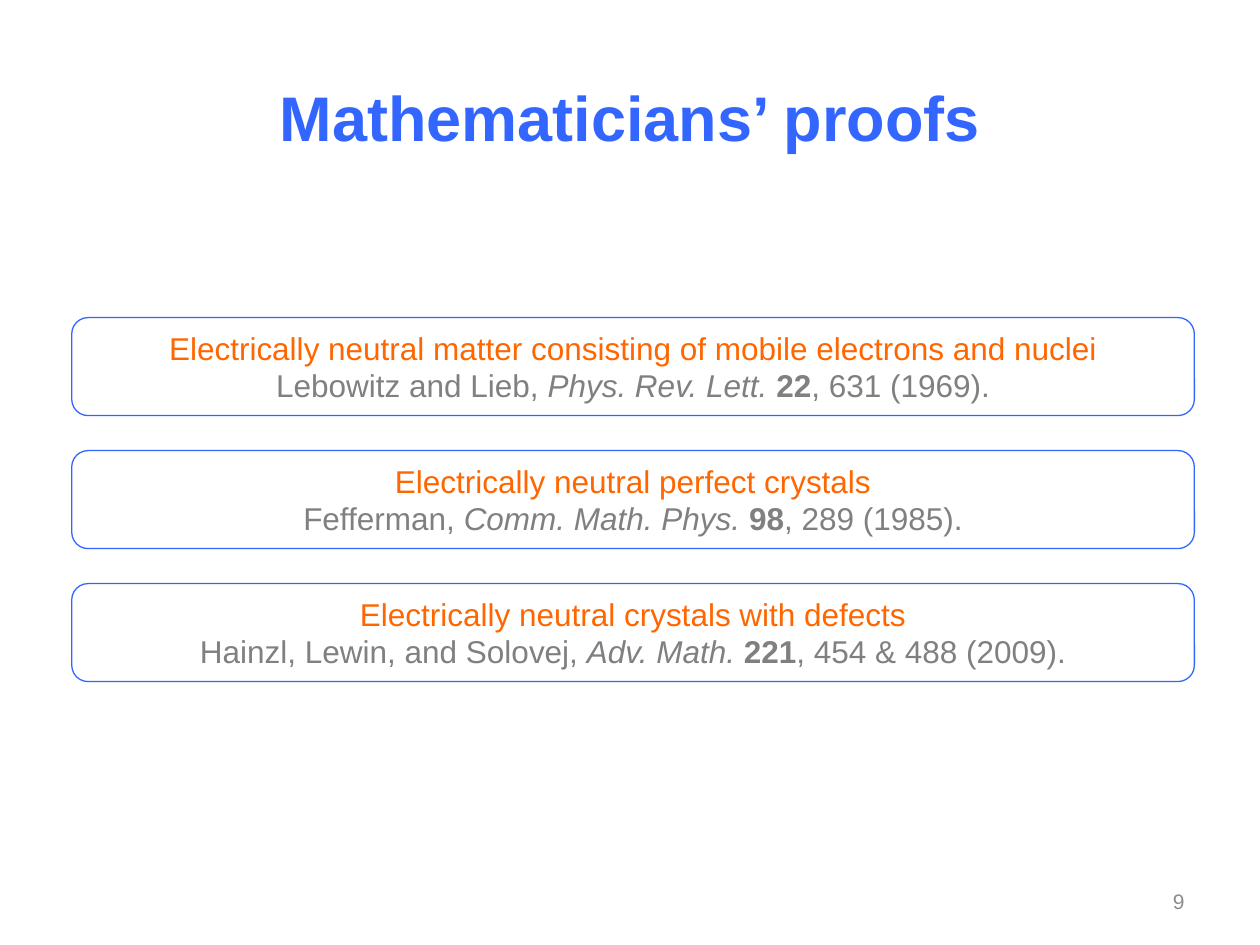
from pptx import Presentation
from pptx.dml.color import RGBColor as RGB
from pptx.enum.shapes import MSO_SHAPE as Shape
from pptx.enum.text import MSO_ANCHOR as Anchor, MSO_AUTO_SIZE as Fit, PP_ALIGN as Align
from pptx.util import Pt

COLORS = {"blue": "3366FF", "orange": "FF6600", "gray": "808080", "page": "8C8C8C"}
FONT = "Arial"

# Claim, authors, journal, volume, pages and year
PROOFS = [
    ("Electrically neutral matter consisting of mobile electrons and nuclei",
     "Lebowitz and Lieb, ", "Phys. Rev. Lett. ", "22", ", 631 (1969)."),
    ("Electrically neutral perfect crystals",
     "Fefferman, ", "Comm. Math. Phys. ", "98", ", 289 (1985)."),
    ("Electrically neutral crystals with defects",
     "Hainzl, Lewin, and Solovej, ", "Adv. Math. ", "221", ", 454 & 488 (2009)."),
]


def color(name):
    return RGB.from_string(COLORS[name])


def add_run(para, text, size, tint, bold=False, italic=False):
    run = para.add_run()
    run.text = text
    font = run.font
    font.name, font.size = FONT, Pt(size)
    font.bold, font.italic = bold, italic
    font.color.rgb = color(tint)


def add_title(slide, left, top, width, height):
    title = slide.shapes.title
    title.left, title.top = Pt(left), Pt(top)
    title.width, title.height = Pt(width), Pt(height)
    frame = title.text_frame
    frame.vertical_anchor = Anchor.MIDDLE
    para = frame.paragraphs[0]
    para.alignment = Align.CENTER
    add_run(para, "Mathematicians’ proofs", 36, "blue", bold=True)


def add_proof(slide, proof, left, top, width, height):
    claim, names, journal, volume, pages = proof
    card = slide.shapes.add_shape(
        Shape.ROUNDED_RECTANGLE, Pt(left), Pt(top), Pt(width), Pt(height))
    card.shadow.inherit = False
    card.fill.background()
    card.line.color.rgb = color("blue")
    card.line.width = Pt(0.75)
    frame = card.text_frame
    frame.word_wrap = True
    frame.auto_size = Fit.SHAPE_TO_FIT_TEXT
    frame.vertical_anchor = Anchor.TOP
    head, cite = frame.paragraphs[0], frame.add_paragraph()
    head.alignment = cite.alignment = Align.CENTER
    add_run(head, claim, 18, "orange")
    add_run(cite, names, 18, "gray")
    add_run(cite, journal, 18, "gray", italic=True)
    add_run(cite, volume, 18, "gray", bold=True)
    add_run(cite, pages, 18, "gray")


def add_proofs(slide, left, top, width, height, gap):
    for row, proof in enumerate(PROOFS):
        add_proof(slide, proof, left, top + row * (height + gap), width, height)


def add_page(slide, left, top, width, height):
    box = slide.shapes.add_textbox(Pt(left), Pt(top), Pt(width), Pt(height))
    frame = box.text_frame
    frame.word_wrap = True
    frame.vertical_anchor = Anchor.MIDDLE
    para = frame.paragraphs[0]
    para.alignment = Align.RIGHT
    add_run(para, "9", 12, "page")


def main():
    deck = Presentation()
    deck.slide_width, deck.slide_height = Pt(720), Pt(540)
    slide = deck.slides.add_slide(deck.slide_layouts[5])
    add_title(slide, 36, 21.6, 648, 90)
    add_page(slide, 516, 500.5, 168, 28.75)
    add_proofs(slide, 41, 181.5, 641.5, 56, 20)
    deck.save("out.pptx")


if __name__ == "__main__":
    main()
